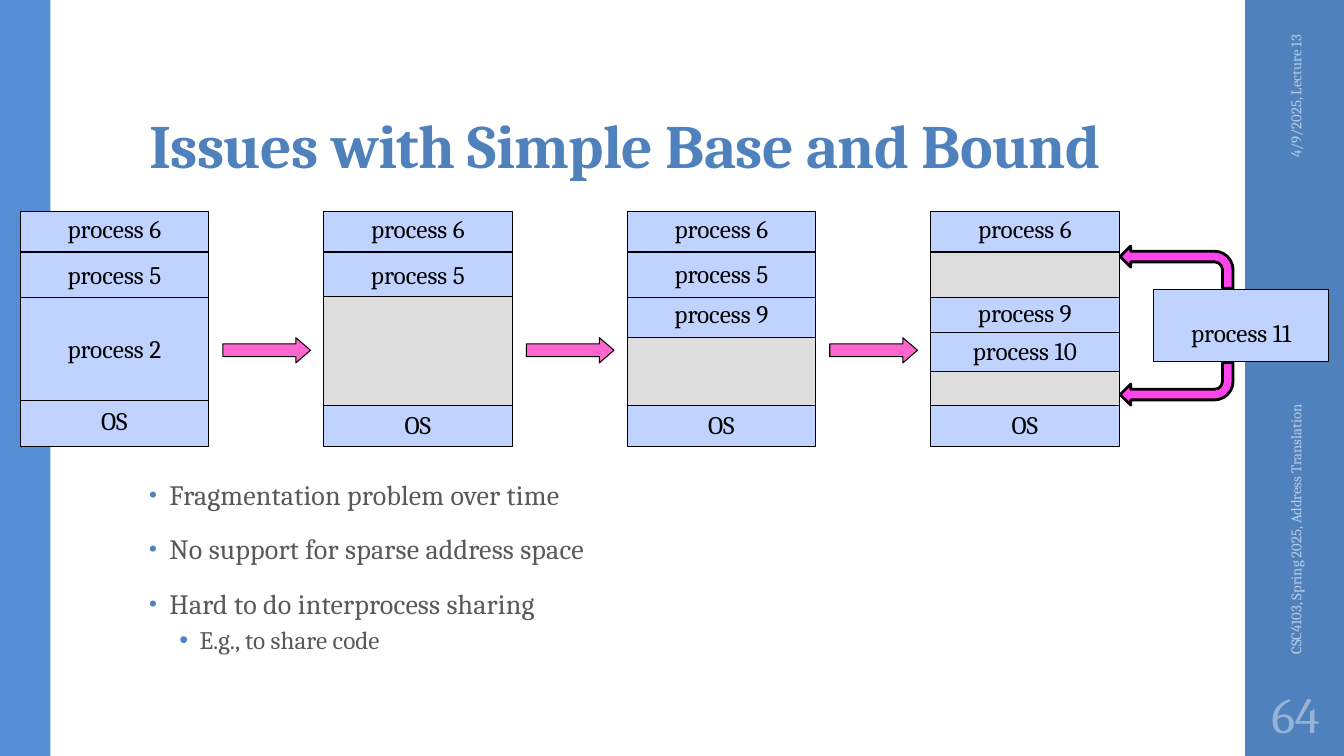
from dataclasses import dataclass

from lxml.etree import SubElement
from pptx import Presentation
from pptx.dml.color import RGBColor
from pptx.enum.shapes import MSO_CONNECTOR, MSO_SHAPE
from pptx.enum.text import MSO_ANCHOR, MSO_AUTO_SIZE, PP_ALIGN
from pptx.oxml.ns import qn
from pptx.util import Inches, Pt


@dataclass(frozen=True)
class Theme:
    font: str = "Cambria"
    accent: str = "4F81BD"
    left_band: str = "558ED5"
    body: str = "595959"
    footer: str = "B9CDE5"
    number: str = "95B3D7"
    ink: str = "000000"
    used: str = "C0D2FE"
    free: str = "DDDDDD"
    step: str = "FF66CC"
    choice: str = "FF44EC"
    title_size: float = 44
    body_size: float = 20
    label_size: float = 18
    footer_size: float = 10.5
    number_size: float = 36


class SlideBuilder:
    def __init__(self, prs, theme):
        self.theme = theme
        self.s = prs.slides.add_slide(prs.slide_layouts[1])

    def style(self, p, size, color, bold=False, spacing=0):
        for r in p.runs:
            r.font.name = self.theme.font
            r.font.size = Pt(size)
            r.font.bold = bold
            r.font.color.rgb = RGBColor.from_string(color)
            if spacing:
                r.font._element.set("spc", str(spacing))

    def place(self, sp, x, y, w, h):
        sp.left, sp.top, sp.width, sp.height = map(Inches, (x, y, w, h))

    def title(self, text, x, y, w, h):
        sp = self.s.shapes.title
        self.place(sp, x, y, w, h)
        tf = sp.text_frame
        tf.text = text
        tf.auto_size = MSO_AUTO_SIZE.NONE
        tf.vertical_anchor = MSO_ANCHOR.BOTTOM
        tf.margin_top = Inches(0.03)
        p = tf.paragraphs[0]
        p.alignment = PP_ALIGN.LEFT
        p.line_spacing = 0.9
        self.style(p, self.theme.title_size, self.theme.accent, True, -50)

    def bullets(self, items, x, y, w, h):
        sp = self.s.placeholders[1]
        self.place(sp, x, y, w, h)
        tf = sp.text_frame
        tf.auto_size = MSO_AUTO_SIZE.NONE
        for i, (level, text) in enumerate(items):
            p = tf.add_paragraph() if i else tf.paragraphs[0]
            p.text = text
            p.level = level
            p.line_spacing = 0.9 if level else 0.95
            p.space_before = Pt((3 if level else 14) if i else 0)
            p.space_after = Pt(3 if level else 2)
            size = self.theme.label_size if level else self.theme.body_size
            self.style(p, size, self.theme.body, spacing=0 if level else 10)
            self.bullet(p, 0.5 if level else 0.2, 100 if level else 80)

    def bullet(self, p, indent, percent):
        pPr = p._p.get_or_add_pPr()
        pPr.set("marL", str(Inches(indent)))
        pPr.set("indent", str(Inches(-0.2)))
        color = SubElement(pPr, qn("a:buClr"))
        SubElement(color, qn("a:srgbClr"), val=self.theme.accent)
        SubElement(pPr, qn("a:buSzPct"), val=str(percent * 1000))
        SubElement(pPr, qn("a:buFont"), typeface="Arial")
        SubElement(pPr, qn("a:buChar"), char="•")

    def text(self, text, x, y, w, h, size, color,
             align=PP_ALIGN.CENTER, rotation=0, inset=0.1):
        sp = self.s.shapes.add_textbox(*map(Inches, (x, y, w, h)))
        sp.rotation = rotation
        tf = sp.text_frame
        tf.text = text
        tf.word_wrap = True
        tf.vertical_anchor = MSO_ANCHOR.MIDDLE
        tf.margin_left = tf.margin_right = Inches(inset)
        tf.paragraphs[0].alignment = align
        self.style(tf.paragraphs[0], size, color)

    def label(self, text, x, y, w):
        self.text(text, x, y, w, 0.4, self.theme.label_size, self.theme.ink)

    def shape(self, kind, x, y, w, h, fill, line=0.75):
        sp = self.s.shapes.add_shape(kind, *map(Inches, (x, y, w, h)))
        sp.shadow.inherit = False
        sp.fill.solid()
        sp.fill.fore_color.rgb = RGBColor.from_string(fill)
        if line:
            sp.line.color.rgb = RGBColor.from_string(self.theme.ink)
            sp.line.width = Pt(line)
        else:
            sp.line.fill.background()
        return sp

    def box(self, x, y, w, h, fill, line=0.75):
        return self.shape(MSO_SHAPE.RECTANGLE, x, y, w, h, fill, line)

    def divider(self, x, y, w):
        c = self.s.shapes.add_connector(
            MSO_CONNECTOR.STRAIGHT, *map(Inches, (x, y, x + w, y)))
        c.line.color.rgb = RGBColor.from_string(self.theme.ink)
        c.line.width = Pt(0.75)
        SubElement(c._element.spPr, qn("a:effectLst"))

    def step_arrow(self, x, y):
        sp = self.shape(MSO_SHAPE.RIGHT_ARROW, x, y, 0.87, 0.25, self.theme.step)
        sp.adjustments[1] = 0.58

    def choice_arrow(self, x, y, upside_down):
        sp = self.shape(MSO_SHAPE.BENT_ARROW, x, y, 1.12, 0.42, self.theme.choice, 2)
        xfrm = sp._element.spPr.find(qn("a:xfrm"))
        xfrm.set("flipH", "1")
        if upside_down:
            xfrm.set("flipV", "1")

    def memory(self, x, y, w, h, dividers, labels, gaps):
        self.box(x, y, w, h, self.theme.used)
        for line_y in dividers:
            self.divider(x, line_y, w)
        for top, bottom in gaps:
            self.box(x, top, w, bottom - top, self.theme.free)
        for text, label_y in labels:
            self.label(text, x, label_y, w)


# Each stage: divider heights, labels with their tops, free gaps (top, bottom)
STAGES = [
    ([2.5, 2.95, 3.97],
     [("process 6", 2.07), ("process 5", 2.52), ("process 2", 3.26), ("OS", 3.97)], []),
    ([2.5],
     [("process 6", 2.07), ("process 5", 2.52), ("OS", 4.01)], [(2.94, 4.02)]),
    ([2.5, 2.95],
     [("process 6", 2.07), ("process 5", 2.51), ("process 9", 2.91), ("OS", 4.01)],
     [(3.35, 4.02)]),
    ([3.3],
     [("process 6", 2.07), ("process 9", 2.9), ("process 10", 3.28), ("OS", 4.01)],
     [(2.5, 2.95), (3.69, 4.02)]),
]
BULLETS = [
    (0, "Fragmentation problem over time"),
    (0, "No support for sparse address space"),
    (0, "Hard to do interprocess sharing"),
    (1, "E.g., to share code"),
]


def main():
    prs = Presentation()
    prs.slide_width, prs.slide_height = Inches(13.33), Inches(7.5)
    theme = Theme()
    b = SlideBuilder(prs, theme)

    # Side bands
    b.box(12.35, 0, 0.98, 7.5, theme.accent, line=0)
    b.box(0, 0, 0.5, 7.5, theme.left_band, line=0)

    # Title and list
    b.title("Issues with Simple Base and Bound", 1.38, 0.32, 10.6, 1.53)
    b.bullets(BULLETS, 1.38, 4.71, 9.4, 2.05)

    # Date, course and slide number
    b.text("4/9/2025, Lecture 13", 11.81, 1.09, 2.08, 0.4,
           theme.footer_size, theme.footer, PP_ALIGN.RIGHT, 270)
    b.text("CSC4103, Spring 2025, Address Translation", 10.89, 4.43, 3.92, 0.4,
           theme.footer_size, theme.footer, PP_ALIGN.LEFT, 270)
    b.text("64", 12.35, 6.75, 1, 0.65, theme.number_size, theme.number, inset=0.05)

    # Memory over time
    left, pitch, width = 0.2, 3.01, 1.87
    for i, (dividers, labels, gaps) in enumerate(STAGES):
        x = left + i * pitch
        b.memory(x, 2.1, width, 2.33, dividers, labels, gaps)
        if i:
            b.step_arrow(x - 1, 3.35)

    # Waiting process and its two possible places
    b.box(11.44, 2.87, 1.74, 0.72, theme.used)
    b.label("process 11", 11.44, 3.1, 1.74)
    b.choice_arrow(11.11, 2.44, upside_down=False)
    b.choice_arrow(11.11, 3.6, upside_down=True)

    prs.save("out.pptx")


if __name__ == "__main__":
    main()
